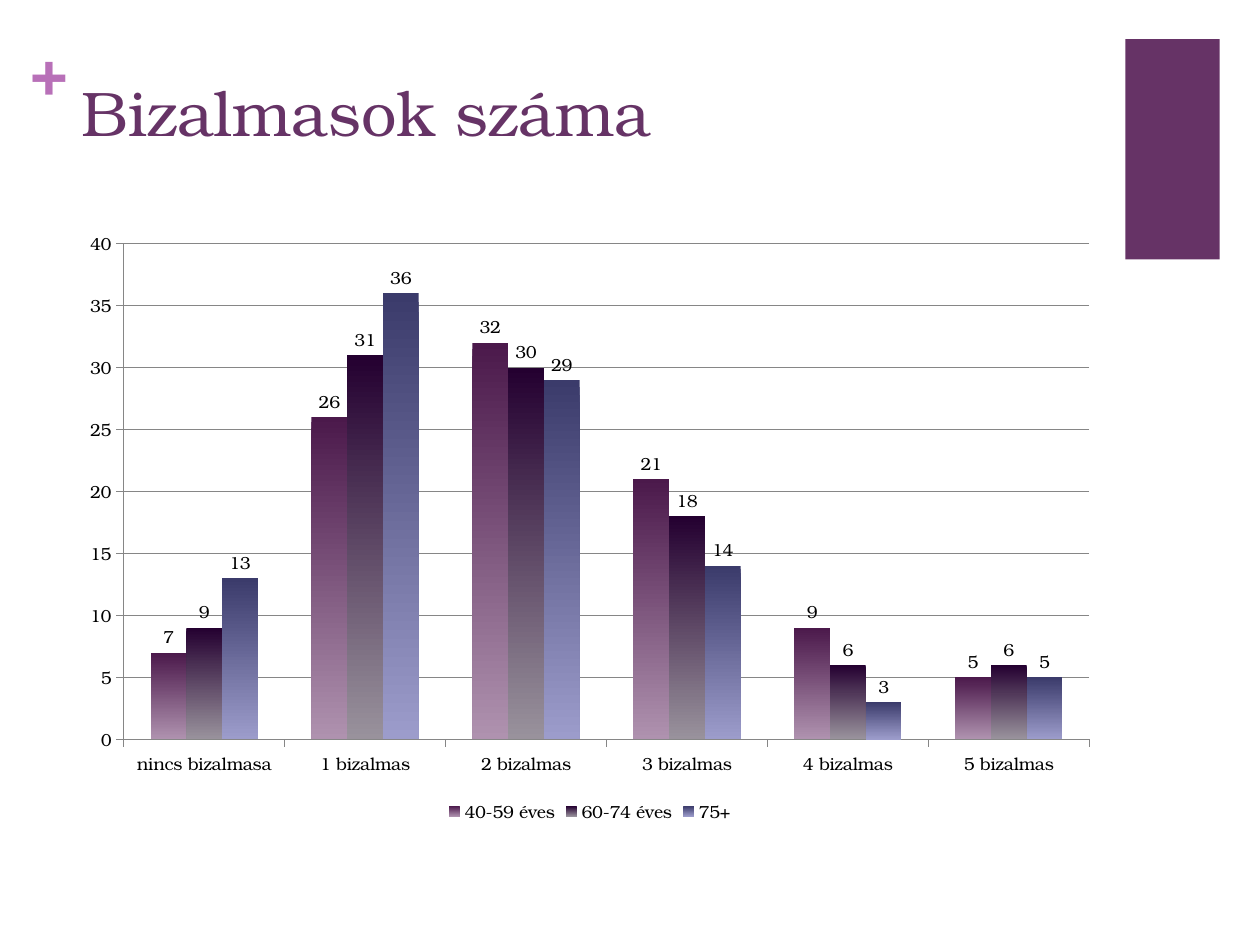
from dataclasses import dataclass
from typing import Any

from pptx import Presentation
from pptx.chart.data import CategoryChartData
from pptx.dml.color import RGBColor
from pptx.enum.chart import XL_CHART_TYPE as CT, XL_LABEL_POSITION as LP
from pptx.enum.chart import XL_LEGEND_POSITION as LegPos, XL_TICK_MARK as Tick
from pptx.enum.shapes import MSO_SHAPE as Shape
from pptx.enum.text import MSO_ANCHOR as Anchor
from pptx.util import Pt


def rgb(value):
    return RGBColor.from_string(value)


@dataclass
class Deck:
    s: Any
    font: str = "TeX Gyre Bonum"
    main: str = "663366"
    accent: str = "B870B8"
    ink: str = "000000"
    grid: str = "868686"

    def set_font(self, font, size, color, bold=False):
        font.name, font.size, font.bold = self.font, Pt(size), bold
        font.color.rgb = rgb(color)

    def rect(self, box, color):
        sp = self.s.shapes.add_shape(Shape.RECTANGLE, *map(Pt, box))
        sp.shadow.inherit = False
        sp.fill.solid()
        sp.fill.fore_color.rgb = rgb(color)
        sp.line.fill.background()

    def text(self, box, text, size, color, bold=False, inset=(0, 0)):
        tf = self.s.shapes.add_textbox(*map(Pt, box)).text_frame
        tf.word_wrap = True
        tf.vertical_anchor = Anchor.TOP
        tf.margin_left = tf.margin_right = Pt(inset[0])
        tf.margin_top = tf.margin_bottom = Pt(inset[1])
        p = tf.paragraphs[0]
        p.text = text
        self.set_font(p.font, size, color, bold)

    def columns(self, box, cats, series, gradients):
        data = CategoryChartData()
        data.categories = cats
        for name, vals in series.items():
            data.add_series(name, vals)
        chart = self.s.shapes.add_chart(
            CT.COLUMN_CLUSTERED, *map(Pt, box), data).chart
        self.set_font(chart.font, 10, self.ink)
        chart.has_title = False
        chart.has_legend = True
        chart.legend.position = LegPos.BOTTOM
        chart.legend.include_in_layout = False

        # Axes
        val = chart.value_axis
        val.minimum_scale, val.maximum_scale, val.major_unit = 0, 40, 5
        val.has_major_gridlines = True
        for axis in (chart.category_axis, val):
            axis.major_tick_mark = Tick.OUTSIDE
            axis.minor_tick_mark = Tick.NONE
        for holder in (chart.category_axis, val, val.major_gridlines):
            holder.format.line.color.rgb = rgb(self.grid)
            holder.format.line.width = Pt(0.75)

        # Bars shaded from top to bottom, with values above
        plot = chart.plots[0]
        plot.gap_width, plot.overlap = 150, 0
        plot.vary_by_categories = False
        for ser, colors in zip(plot.series, gradients):
            fill = ser.format.fill
            fill.gradient()
            fill.gradient_angle = 270
            for stop, color in zip(fill.gradient_stops, colors):
                stop.color.rgb = rgb(color)
            labels = ser.data_labels
            labels.show_value = True
            labels.position = LP.OUTSIDE_END
            self.set_font(labels.font, 10, self.ink)


def main():
    prs = Presentation()
    prs.slide_width, prs.slide_height = Pt(720), Pt(540)
    deck = Deck(prs.slides.add_slide(prs.slide_layouts[6]))

    # Decoration
    deck.rect((643, 22.3, 54, 126), deck.main)
    deck.text((17.3, 18, 20.9, 44), "+", 36, deck.accent, bold=True)

    # Title
    deck.text((39.6, 38.2, 594.7, 87.8), "Bizalmasok száma", 36, deck.main,
              inset=(7.2, 3.6))

    # Chart
    cats = ["nincs bizalmasa"] + [f"{n} bizalmas" for n in range(1, 6)]
    series = {
        "40-59 éves": (7, 26, 32, 21, 9, 5),
        "60-74 éves": (9, 31, 30, 18, 6, 6),
        "75+": (13, 36, 29, 14, 3, 5),
    }
    gradients = [("4B194B", "AF92AF"), ("240030", "99929C"),
                 ("3B3B6B", "9C9CCB")]
    deck.columns((39.6, 126, 594.7, 347), cats, series, gradients)

    prs.save("out.pptx")


if __name__ == "__main__":
    main()
